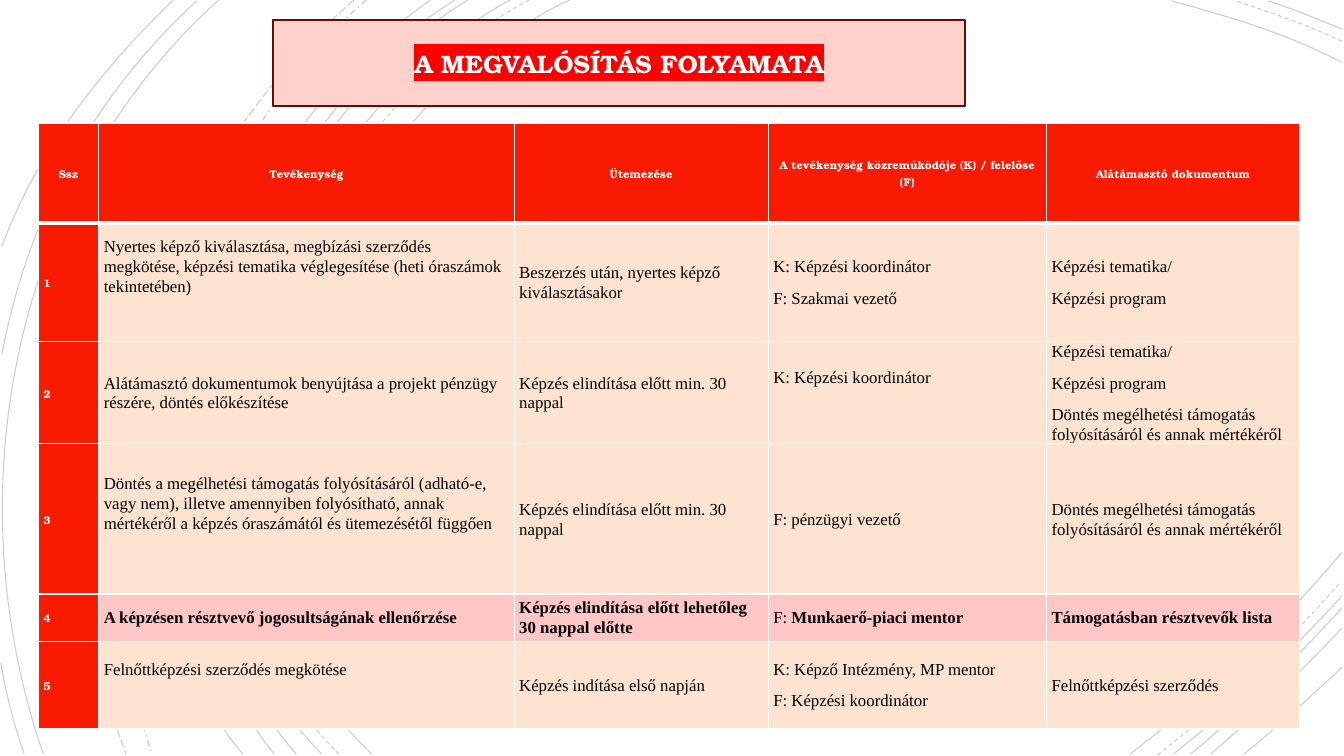
from lxml.etree import SubElement
from pptx import Presentation
from pptx.dml.color import RGBColor
from pptx.enum.dml import MSO_LINE
from pptx.enum.shapes import MSO_SHAPE
from pptx.enum.text import MSO_ANCHOR, PP_ALIGN
from pptx.oxml.ns import qn
from pptx.util import Inches, Pt

# Content: "**" marks bold text, each cell is a list of paragraphs
TITLE = "A MEGVALÓSÍTÁS FOLYAMATA"
HEADERS = ["Ssz", "Tevékenység", "Ütemezése",
           "A tevékenység közreműködője (K) / felelőse (F)", "Alátámasztó dokumentum"]
ACTIVITIES = [
    [["Nyertes képző kiválasztása, megbízási szerződés megkötése, képzési tematika "
      "véglegesítése (heti óraszámok tekintetében)"],
     ["Beszerzés után, nyertes képző kiválasztásakor"],
     ["K: Képzési koordinátor", "F: Szakmai vezető"],
     ["Képzési tematika/", "Képzési program"]],
    [["Alátámasztó dokumentumok benyújtása a projekt pénzügy részére, döntés előkészítése"],
     ["Képzés elindítása előtt min. 30 nappal"],
     ["K: Képzési koordinátor"],
     ["Képzési tematika/", "Képzési program",
      "Döntés megélhetési támogatás folyósításáról és annak mértékéről"]],
    [["Döntés a megélhetési támogatás folyósításáról (adható-e, vagy nem), illetve "
      "amennyiben folyósítható, annak mértékéről a képzés óraszámától és ütemezésétől függően"],
     ["Képzés elindítása előtt min. 30 nappal"],
     ["F: pénzügyi vezető"],
     ["Döntés megélhetési támogatás folyósításáról és annak mértékéről"]],
    [["**A képzésen résztvevő jogosultságának ellenőrzése**"],
     ["**Képzés elindítása előtt lehetőleg 30 nappal előtte**"],
     ["F: **Munkaerő-piaci mentor**"],
     ["**Támogatásban résztvevők lista**"]],
    [["Felnőttképzési szerződés megkötése"],
     ["Képzés indítása első napján"],
     ["K: Képző Intézmény, MP mentor", "F: Képzési koordinátor"],
     ["Felnőttképzési szerződés"]],
]
RAISED_CELLS = {(1, 1), (2, 3), (3, 1), (5, 1)}  # text sits above the middle
ACCENT_ROW = 4

# Layout in inches
SLIDE_SIZE = (13.33, 7.5)
TITLE_BOX = (2.71, 0.2, 6.86, 0.85)
TABLE_LEFT, TABLE_TOP = 0.38, 1.22
COLUMN_WIDTHS = [0.6, 4.12, 2.52, 2.76, 2.51]
ROW_HEIGHTS = [0.99, 1.18, 0.93, 1.49, 0.47, 0.87]
RAISED_MARGIN = 0.31

COLORS = {"red": "F81B02", "peach": "FEE4D0", "pink": "FFC6C6", "title": "FFD1CB",
          "title_line": "680B01", "highlight": "FF0000", "white": "FFFFFF", "black": "000000"}
HEADING_FONT = {"name": "TeX Gyre Bonum", "size": Pt(8), "bold": True}
BODY_FONT = {"name": "Times New Roman", "size": Pt(12)}
TITLE_FONT = {"name": "TeX Gyre Bonum", "size": Pt(18), "bold": True}

# Background arcs: (dash, width) -> start, control 1, control 2, end
ARCS = {
    (MSO_LINE.SOLID, 0.75): [
        ((5.65, 0), (3.15, 1.15), (1.43, 5.4), (3.69, 7.48)),
        ((13.31, 0.62), (12.78, 0.34), (12.18, 0.16), (11.62, 0.01)),
        ((11.21, 7.48), (11.97, 6.9), (12.69, 6.22), (13.31, 5.48)),
        ((5.06, 0), (2.7, 1.27), (1.1, 5.37), (3.19, 7.48)),
        ((13.31, 0.29), (13.07, 0.19), (12.83, 0.09), (12.58, 0.01)),
        ((11.64, 7.48), (12.23, 7.01), (12.8, 6.48), (13.31, 5.91)),
        ((4.64, 0), (2.44, 1.33), (1.1, 5.41), (2.94, 7.48)),
        ((11.81, 7.48), (12.34, 7.04), (12.84, 6.55), (13.31, 6.03)),
        ((4.51, 0), (2.31, 1.38), (0.97, 5.33), (2.72, 7.48)),
        ((12.01, 7.48), (12.46, 7.09), (12.9, 6.67), (13.31, 6.23)),
        ((4.27, 0), (2.17, 1.47), (0.53, 5.29), (2.41, 7.48)),
        ((12.34, 7.48), (12.67, 7.21), (12.99, 6.92), (13.31, 6.62)),
        ((2.17, 0), (0.11, 1.85), (-0.46, 4.9), (0.43, 7.48)),
        ((1.95, 0.01), (0.92, 0.96), (0.28, 2.14), (0.02, 3.51)),
        ((0.01, 6.58), (0.06, 6.89), (0.14, 7.19), (0.24, 7.48)),
        ((1.72, 0), (1, 0.69), (0.37, 1.5), (0.02, 2.44))],
    (MSO_LINE.DASH, 0.75): [
        ((5.25, 0), (2.85, 1.25), (1.23, 5.37), (3.36, 7.48)),
        ((13.31, 0.41), (12.97, 0.25), (12.6, 0.12), (12.25, 0.01)),
        ((11.48, 7.49), (12.13, 6.98), (12.75, 6.4), (13.3, 5.77))],
    (MSO_LINE.DASH_DOT, 1): [((3.63, 0), (1.76, 1.66), (0.65, 5.09), (1.51, 7.48))],
    (MSO_LINE.LONG_DASH, 0.75): [((3.51, 0), (1.57, 1.69), (0.29, 4.99), (1.25, 7.48))],
}
ARC_ALPHA = "20000"


def rgb(name):
    return RGBColor.from_string(COLORS[name])


def apply_font(font, values, color):
    for key, value in values.items():
        setattr(font, key, value)
    font.color.rgb = rgb(color)


def draw_arc(slide, arc, dash, width):
    points = [tuple(map(Inches, point)) for point in arc]
    builder = slide.shapes.build_freeform(*points[0])
    builder.add_line_segments(points[1:], close=False)
    shape = builder.convert_to_shape()
    # Turn the three straight segments into one Bezier curve
    outline = shape._element.find(".//" + qn("a:path"))
    segments = outline.findall(qn("a:lnTo"))
    curve = SubElement(outline, qn("a:cubicBezTo"))
    for segment in segments:
        curve.append(segment[0])
        outline.remove(segment)
    shape.shadow.inherit = False
    shape.fill.background()
    shape.line.color.rgb = rgb("black")
    shape.line.width = Pt(width)
    shape.line.dash_style = dash
    color = shape.line._ln.find(".//" + qn("a:srgbClr"))
    SubElement(color, qn("a:alpha"), val=ARC_ALPHA)


def set_borders(cell, row):
    properties = cell._tc.get_or_add_tcPr()
    thick_side = {0: "lnB", 1: "lnT"}.get(row)
    for side in ("lnL", "lnR", "lnT", "lnB"):
        width = Pt(3 if side == thick_side else 1)
        line = SubElement(properties, qn("a:" + side), w=str(width))
        fill = SubElement(line, qn("a:solidFill"))
        SubElement(fill, qn("a:srgbClr"), val=COLORS["white"])


def fill_cell(cell, row, column, paragraphs):
    heading = row == 0 or column == 0
    set_borders(cell, row)
    cell.fill.solid()
    cell.fill.fore_color.rgb = rgb("red" if heading else
                                   "pink" if row == ACCENT_ROW else "peach")
    cell.vertical_anchor = MSO_ANCHOR.MIDDLE
    cell.margin_left = cell.margin_right = Inches(0.05)
    cell.margin_top = 0
    cell.margin_bottom = Inches(RAISED_MARGIN if (row, column) in RAISED_CELLS else 0)
    frame = cell.text_frame
    for index, text in enumerate(paragraphs):
        paragraph = frame.add_paragraph() if index else frame.paragraphs[0]
        paragraph.alignment = PP_ALIGN.CENTER if row == 0 else PP_ALIGN.LEFT
        paragraph.line_spacing = 1.07
        paragraph.space_after = Pt(8)
        for part, words in enumerate(text.split("**")):
            if words:
                run = paragraph.add_run()
                run.text = words
                values = HEADING_FONT if heading else {**BODY_FONT, "bold": part % 2 == 1}
                apply_font(run.font, values, "white" if heading else "black")


def add_activity_table(slide):
    rows = [[[header] for header in HEADERS]]
    rows += [[[str(number)], *cells] for number, cells in enumerate(ACTIVITIES, 1)]
    frame = slide.shapes.add_table(
        len(rows), len(HEADERS), Inches(TABLE_LEFT), Inches(TABLE_TOP),
        Inches(sum(COLUMN_WIDTHS)), Inches(sum(ROW_HEIGHTS)))
    table = frame.table
    table.horz_banding = False
    for column, width in zip(table.columns, COLUMN_WIDTHS):
        column.width = Inches(width)
    for row, height in zip(table.rows, ROW_HEIGHTS):
        row.height = Inches(height)
    for row, cells in enumerate(rows):
        for column, paragraphs in enumerate(cells):
            fill_cell(table.cell(row, column), row, column, paragraphs)


def add_title(slide):
    shape = slide.shapes.add_shape(MSO_SHAPE.RECTANGLE, *map(Inches, TITLE_BOX))
    shape.shadow.inherit = False
    shape.fill.solid()
    shape.fill.fore_color.rgb = rgb("title")
    shape.line.color.rgb = rgb("title_line")
    shape.line.width = Pt(1.25)
    shape.text_frame.vertical_anchor = MSO_ANCHOR.MIDDLE
    paragraph = shape.text_frame.paragraphs[0]
    paragraph.alignment = PP_ALIGN.CENTER
    run = paragraph.add_run()
    run.text = TITLE
    apply_font(run.font, TITLE_FONT, "white")
    # The highlight belongs right after the text fill
    properties = run._r.get_or_add_rPr()
    highlight = SubElement(properties, qn("a:highlight"))
    SubElement(highlight, qn("a:srgbClr"), val=COLORS["highlight"])
    properties.find(qn("a:solidFill")).addnext(highlight)


def main():
    presentation = Presentation()
    presentation.slide_width, presentation.slide_height = map(Inches, SLIDE_SIZE)
    slide = presentation.slides.add_slide(presentation.slide_layouts[6])
    for (dash, width), arcs in ARCS.items():
        for arc in arcs:
            draw_arc(slide, arc, dash, width)
    add_activity_table(slide)
    add_title(slide)
    presentation.save("out.pptx")


if __name__ == "__main__":
    main()
